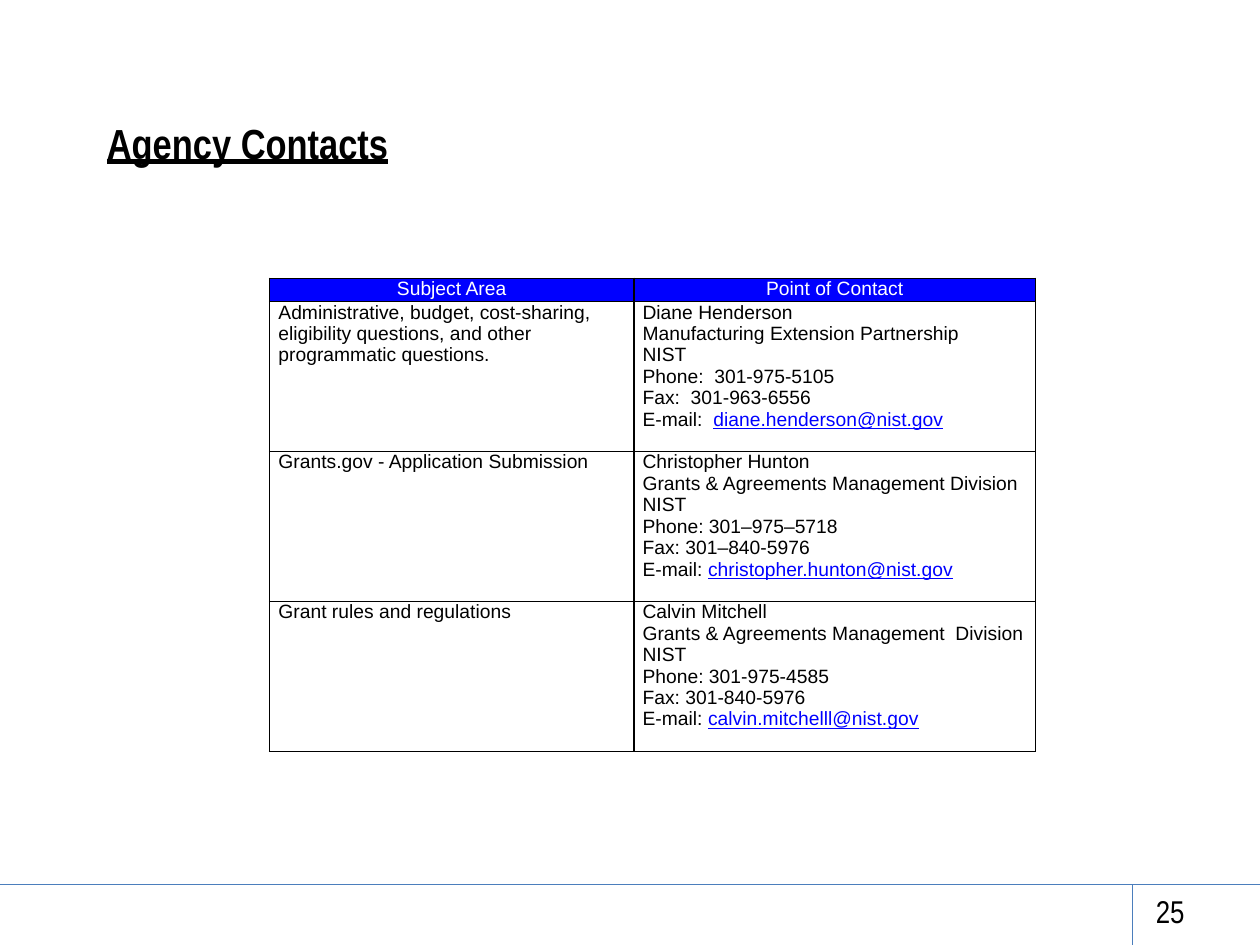
from lxml.etree import SubElement
from pptx import Presentation
from pptx.dml.color import RGBColor
from pptx.enum.shapes import MSO_CONNECTOR
from pptx.enum.text import MSO_ANCHOR, PP_ALIGN
from pptx.oxml.ns import qn
from pptx.util import Inches, Pt

BLACK, WHITE, BLUE, RULE = "000000", "FFFFFF", "0000FF", "4B7EBC"


def color(value):
    return RGBColor.from_string(value)


def add_span(paragraph, text, size, font, value, bold=False, underline=False):
    span = paragraph.add_run()
    span.text = text
    span.font.size = Pt(size)
    span.font.name = font
    span.font.color.rgb = color(value)
    span.font.bold = bold
    span.font.underline = underline


deck = Presentation()
deck.slide_width, deck.slide_height = Inches(10), Inches(7.5)
page = deck.slides.add_slide(deck.slide_layouts[6])

# Footer rules
for x1, y1, x2, y2 in [(0, 7.02, 10, 7.02), (8.99, 7.02, 8.99, 7.5)]:
    rule = page.shapes.add_connector(
        MSO_CONNECTOR.STRAIGHT, Inches(x1), Inches(y1), Inches(x2), Inches(y2))
    rule.line.color.rgb = color(RULE)
    rule.line.width = Pt(0.75)
    SubElement(rule._element.spPr, qn("a:effectLst"))

# Title and page number
for text, bounds, size, strong, align in [
    ("Agency Contacts", (0.75, 0.67, 9.08, 0.92), 24, True, PP_ALIGN.LEFT),
    ("25", (7.17, 7.11, 2.33, 0.24), 18, False, PP_ALIGN.RIGHT),
]:
    box = page.shapes.add_textbox(*[Inches(value) for value in bounds])
    frame = box.text_frame
    frame.word_wrap = True
    frame.vertical_anchor = MSO_ANCHOR.MIDDLE
    frame.paragraphs[0].alignment = align
    add_span(frame.paragraphs[0], text, size, "Arial Narrow", BLACK, strong, strong)

# Contact table: each cell is a list of lines
rows = [
    (["Subject Area"], ["Point of Contact"]),
    (["Administrative, budget, cost-sharing, eligibility questions, "
      "and other programmatic questions."],
     ["Diane Henderson", "Manufacturing Extension Partnership", "NIST",
      "Phone:  301-975-5105", "Fax:  301-963-6556",
      "E-mail:  diane.henderson@nist.gov"]),
    (["Grants.gov - Application Submission"],
     ["Christopher Hunton", "Grants & Agreements Management Division", "NIST",
      "Phone: 301–975–5718", "Fax: 301–840-5976",
      "E-mail: christopher.hunton@nist.gov"]),
    (["Grant rules and regulations"],
     ["Calvin Mitchell", "Grants & Agreements Management  Division", "NIST",
      "Phone: 301-975-4585", "Fax: 301-840-5976",
      "E-mail: calvin.mitchelll@nist.gov"]),
]
column_widths = [2.89, 3.19]
row_heights = [0.17, 1.19, 1.19, 1.19]

table = page.shapes.add_table(
    len(rows), len(column_widths), Inches(2.14), Inches(2.21),
    Inches(sum(column_widths)), Inches(sum(row_heights))).table
table.first_row = table.horz_banding = False
for column, width in zip(table.columns, column_widths):
    column.width = Inches(width)

for row_index, (row, height) in enumerate(zip(rows, row_heights)):
    table.rows[row_index].height = Inches(height)
    is_header = row_index == 0
    for column_index, lines in enumerate(row):
        cell = table.cell(row_index, column_index)
        cell.margin_left = cell.margin_right = Inches(0.07)
        cell.margin_top = cell.margin_bottom = 0

        # Borders come before the fill in the cell properties
        properties = cell._tc.get_or_add_tcPr()
        for side in ("lnL", "lnR", "lnT", "lnB"):
            border = SubElement(properties, qn(f"a:{side}"), w=str(Pt(1)))
            SubElement(SubElement(border, qn("a:solidFill")), qn("a:srgbClr"), val=BLACK)
        if is_header:
            cell.fill.solid()
            cell.fill.fore_color.rgb = color(BLUE)
        else:
            cell.fill.background()

        frame = cell.text_frame
        for line_index, line in enumerate(lines):
            paragraph = frame.add_paragraph() if line_index else frame.paragraphs[0]
            paragraph.alignment = PP_ALIGN.CENTER if is_header else PP_ALIGN.LEFT
            label, space, address = line.rpartition(" ")
            if "@" in address:
                add_span(paragraph, label + space, 11, "Arial", BLACK)
                add_span(paragraph, address, 11, "Arial", BLUE, underline=True)
            else:
                add_span(paragraph, line, 11, "Arial", WHITE if is_header else BLACK)

deck.save("out.pptx")
